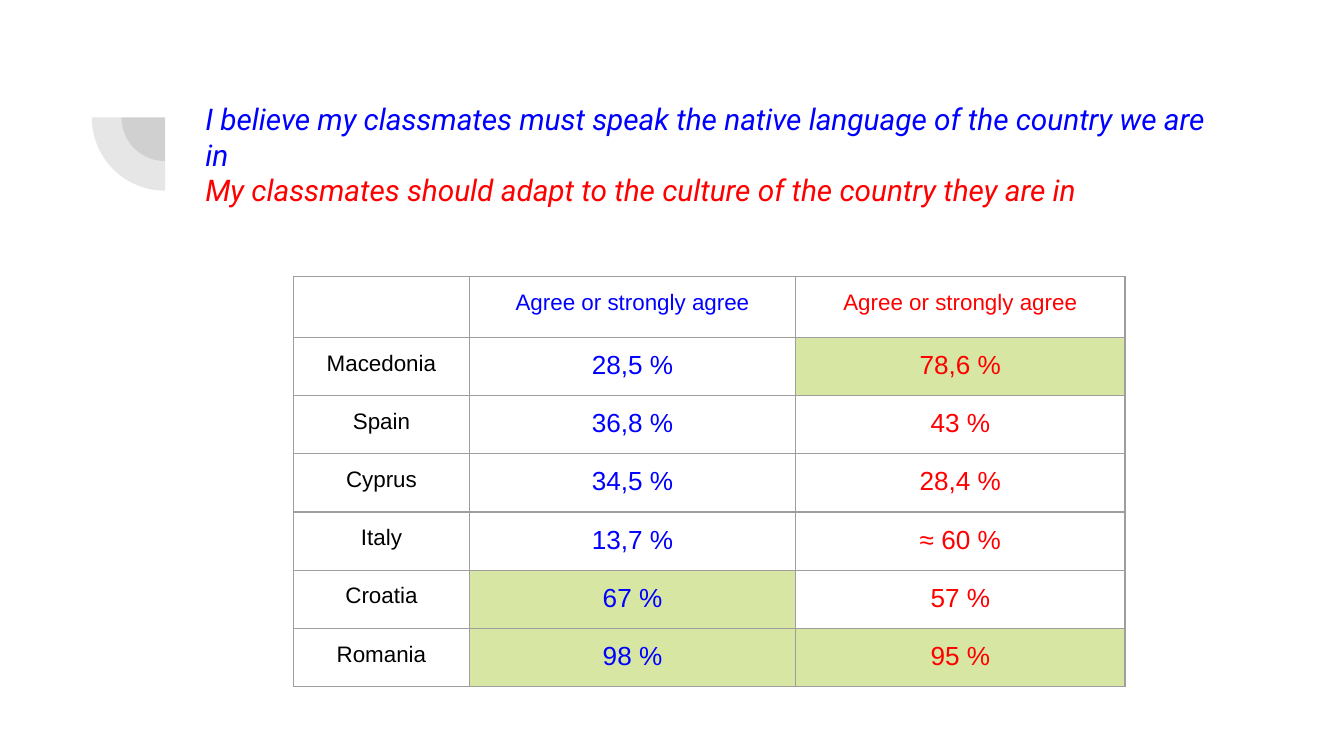
from dataclasses import dataclass

from lxml.etree import SubElement
from pptx import Presentation
from pptx.dml.color import RGBColor
from pptx.enum.shapes import MSO_SHAPE
from pptx.enum.text import MSO_ANCHOR, MSO_AUTO_SIZE, PP_ALIGN
from pptx.oxml.ns import qn
from pptx.util import Cm, Pt


@dataclass(frozen=True)
class Theme:
    blue: str = "0000FF"
    red: str = "FF0000"
    black: str = "000000"
    white: str = "FFFFFF"
    green: str = "D7E6A3"
    grey: str = "424242"
    border: str = "9E9E9E"
    title_font: str = "Roboto"
    table_font: str = "Arial"
    title_size: int = 16
    label_size: int = 12
    value_size: int = 14


theme = Theme()


def style_run(r, font, size, color):
    r.font.name = font
    r.font.size = Pt(size)
    r.font.color.rgb = RGBColor.from_string(color)


def add_borders(cell):
    tcPr = cell._tc.get_or_add_tcPr()
    for i, side in enumerate(("lnL", "lnR", "lnT", "lnB")):
        ln = tcPr.makeelement(qn(f"a:{side}"), {"w": str(Pt(0.75))})
        fill = SubElement(ln, qn("a:solidFill"))
        SubElement(fill, qn("a:srgbClr"), val=theme.border)
        tcPr.insert(i, ln)


prs = Presentation()
prs.slide_width, prs.slide_height = Cm(25.4), Cm(14.29)
s = prs.slides.add_slide(prs.slide_layouts[5])

center_x, center_y = 3.12, 2.22
for size in (1.65, 2.77):
    sp = s.shapes.add_shape(MSO_SHAPE.PIE, Cm(center_x - size / 2),
                            Cm(center_y - size / 2), Cm(size), Cm(size))
    sp.adjustments[0], sp.adjustments[1] = 108, 162
    sp.rotation = 270
    sp.shadow.inherit = False
    sp.fill.solid()
    sp.fill.fore_color.rgb = RGBColor.from_string(theme.grey)
    color = sp.fill._xPr.find(".//" + qn("a:srgbClr"))
    SubElement(color, qn("a:alpha"), val="13000")
    sp.line.fill.background()

title = s.shapes.title
title.left, title.top, title.width, title.height = Cm(3.63), Cm(1.65), Cm(19.53), Cm(2.77)
tf = title.text_frame
tf.word_wrap = True
tf.auto_size = MSO_AUTO_SIZE.NONE
tf.vertical_anchor = MSO_ANCHOR.TOP
tf.margin_left = tf.margin_right = tf.margin_top = tf.margin_bottom = Cm(0.25)
tf.text = ("I believe my classmates must speak the native language of the country we are in\n"
           "My classmates should adapt to the culture of the country they are in")
for p, color in zip(tf.paragraphs, (theme.blue, theme.red)):
    p.alignment = PP_ALIGN.LEFT
    style_run(p.runs[0], theme.title_font, theme.title_size, color)
    p.runs[0].font.italic = True

rows = [
    ("", "Agree or strongly agree", "Agree or strongly agree"),
    ("Macedonia", "28,5 %", "78,6 %"),
    ("Spain", "36,8 %", "43 %"),
    ("Cyprus", "34,5 %", "28,4 %"),
    ("Italy", "13,7 %", "≈ 60 %"),
    ("Croatia", "67 %", "57 %"),
    ("Romania", "98 %", "95 %"),
]
highlights = {(1, 2), (5, 1), (6, 1), (6, 2)}
white_cells = {(1, 1), (5, 2)}
col_widths = (3.32, 6.17, 6.22)
row_heights = [1.15] + [1.1] * 6

table = s.shapes.add_table(len(rows), len(col_widths), Cm(5.55), Cm(5.23),
                           Cm(sum(col_widths)), Cm(sum(row_heights))).table
table.first_row = table.horz_banding = False
for col, width in zip(table.columns, col_widths):
    col.width = Cm(width)
for row, height in zip(table.rows, row_heights):
    row.height = Cm(height)

for i, texts in enumerate(rows):
    for j, text in enumerate(texts):
        cell = table.cell(i, j)
        cell.margin_left = cell.margin_right = cell.margin_top = cell.margin_bottom = Cm(0.25)
        if (i, j) in highlights | white_cells:
            fill_color = theme.green if (i, j) in highlights else theme.white
            cell.fill.solid()
            cell.fill.fore_color.rgb = RGBColor.from_string(fill_color)
        else:
            cell.fill.background()
        add_borders(cell)
        size = theme.value_size if i and j else theme.label_size
        p = cell.text_frame.paragraphs[0]
        p.text = text
        p.alignment = PP_ALIGN.CENTER
        for r in p.runs:
            style_run(r, theme.table_font, size, (theme.black, theme.blue, theme.red)[j])
        if not text:
            SubElement(p._p, qn("a:endParaRPr"), sz=str(size * 100))

prs.save("out.pptx")
